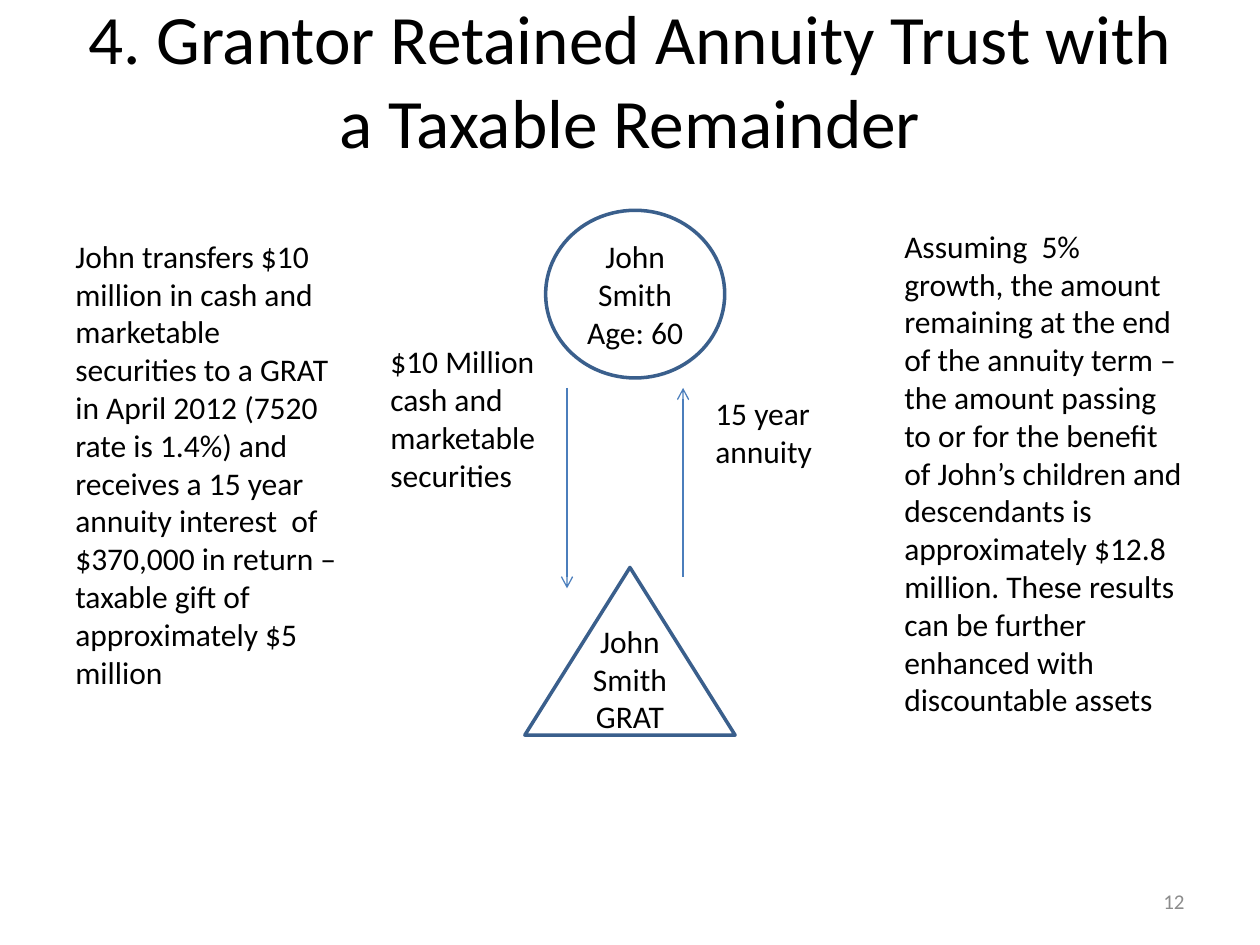
import dataclasses

import pptx
import pptx.dml.color
import pptx.enum.shapes
import pptx.enum.text
import pptx.oxml.ns
import pptx.util
from lxml import etree

Cm, Pt = pptx.util.Cm, pptx.util.Pt
RGB = pptx.dml.color.RGBColor.from_string
ALIGN = pptx.enum.text.PP_ALIGN
ANCHOR = pptx.enum.text.MSO_ANCHOR
SHAPE = pptx.enum.shapes.MSO_SHAPE
qn = pptx.oxml.ns.qn


@dataclasses.dataclass(frozen=True)
class Theme:
    font: str = "Calibri"
    ink: str = "000000"
    muted: str = "8C8C8C"
    paper: str = "FFFFFF"
    outline: str = "3A5F8C"
    arrow: str = "4B7EBC"
    title: float = 39.6
    body: float = 18
    small: float = 12
    outline_width: float = 2
    arrow_width: float = 0.75


THEME = Theme()


def write(sp, lines, size=THEME.body, color=THEME.ink, align=ALIGN.LEFT, **frame):
    tf = sp.text_frame
    for name, value in {"word_wrap": True, **frame}.items():
        setattr(tf, name, value)
    for i, line in enumerate(lines):
        p = tf.paragraphs[0] if i == 0 else tf.add_paragraph()
        p.alignment = align
        r = p.add_run()
        r.text = line
        for name, value in {"name": THEME.font, "size": Pt(size)}.items():
            setattr(r.font, name, value)
        r.font.color.rgb = RGB(color)


def add_text(s, box, text, **formats):
    sp = s.shapes.add_textbox(*map(Cm, box))
    write(sp, [text], **formats)


def add_party(s, kind, box, lines, **frame):
    sp = s.shapes.add_shape(kind, *map(Cm, box))
    sp.shadow.inherit = False
    sp.fill.solid()
    sp.fill.fore_color.rgb = RGB(THEME.paper)
    sp.line.color.rgb = RGB(THEME.outline)
    sp.line.width = Pt(THEME.outline_width)
    write(sp, lines, align=ALIGN.CENTER, **frame)


def add_arrow(s, x, start, end):
    line = s.shapes.add_connector(
        pptx.enum.shapes.MSO_CONNECTOR.STRAIGHT, Cm(x), Cm(start), Cm(x), Cm(end))
    line.line.color.rgb = RGB(THEME.arrow)
    line.line.width = Pt(THEME.arrow_width)
    etree.SubElement(line.line._get_or_add_ln(), qn("a:tailEnd"), type="arrow")
    etree.SubElement(line._element.spPr, qn("a:effectLst"))


def add_title(s, box):
    add_text(s, box, "4. Grantor Retained Annuity Trust with a Taxable Remainder",
             size=THEME.title, align=ALIGN.CENTER, vertical_anchor=ANCHOR.MIDDLE)


def add_page_number(s, box):
    add_text(s, box, "12", size=THEME.small, color=THEME.muted,
             align=ALIGN.RIGHT, vertical_anchor=ANCHOR.MIDDLE)


def add_trust_diagram(s, box):
    left, top, width, height = box
    party_height = 3.38
    arrow_top = top + 3.58

    # Grantor above, trust below
    add_party(s, SHAPE.OVAL, (left + 3.38, top, 3.61, party_height),
              ["John Smith", "Age: 60"], vertical_anchor=ANCHOR.MIDDLE)
    add_party(s, SHAPE.ISOSCELES_TRIANGLE,
              (left + 2.96, top + height - party_height, 4.24, party_height),
              ["John Smith GRAT"], vertical_anchor=ANCHOR.BOTTOM, margin_bottom=0)

    # Assets go down, annuity comes back up
    add_arrow(s, left + 3.81, arrow_top, top + 7.62)
    add_arrow(s, left + 6.15, top + 7.39, arrow_top)
    add_text(s, (left, top + 2.54, 4.01, 3.33),
             "$10 Million cash and marketable securities")
    add_text(s, (left + width - 3.61, arrow_top, 3.61, 1.8), "15 year annuity")


def add_transfer_note(s, box):
    add_text(s, box, "John transfers $10 million in cash and marketable securities "
             "to a GRAT in April 2012 (7520 rate is 1.4%) and receives a 15 year "
             "annuity interest  of $370,000 in return – taxable gift of "
             "approximately $5 million")


def add_result_note(s, box):
    add_text(s, box, "Assuming  5% growth, the amount remaining at the end of the "
             "annuity term – the amount passing to or for the benefit of John’s "
             "children and descendants is approximately $12.8 million. These "
             "results can be further enhanced with discountable assets")


def main():
    prs = pptx.Presentation()
    prs.slide_width, prs.slide_height = Cm(25.4), Cm(19.05)
    s = prs.slides.add_slide(prs.slide_layouts[6])
    add_title(s, (1.27, 0, 22.86, 3.18))
    add_transfer_note(s, (1.27, 4.65, 5.92, 9.5))
    add_trust_diagram(s, (7.62, 4.24, 10.16, 10.58))
    add_result_note(s, (17.98, 4.45, 6.15, 10.26))
    add_page_number(s, (18.21, 17.65, 5.92, 1.02))
    prs.save("out.pptx")


if __name__ == "__main__":
    main()
